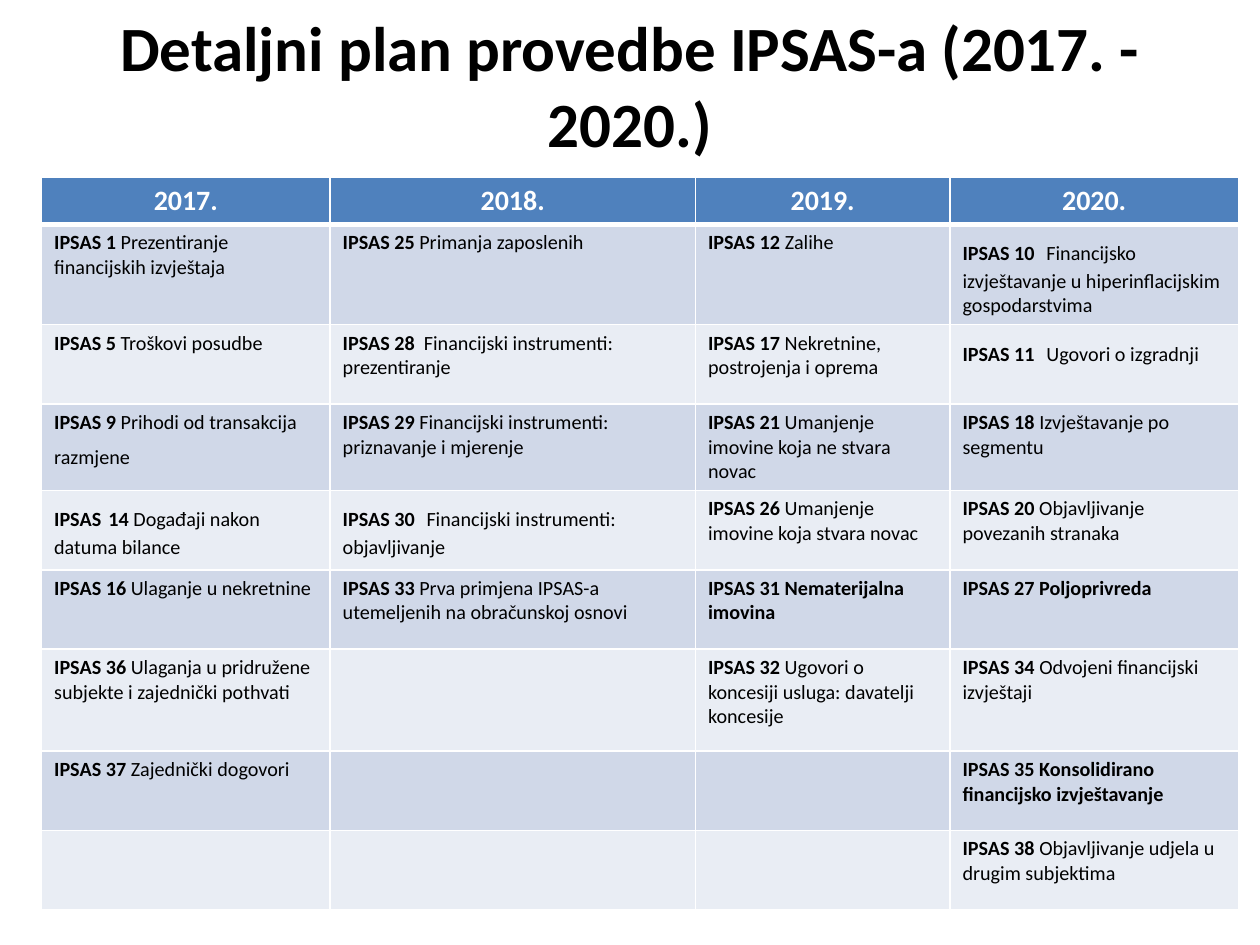
from dataclasses import dataclass

from lxml import etree
from pptx import Presentation
from pptx.dml.color import RGBColor
from pptx.enum.text import MSO_ANCHOR, MSO_AUTO_SIZE, PP_ALIGN
from pptx.oxml.ns import qn
from pptx.util import Inches, Pt

CENTER = PP_ALIGN.CENTER
MIDDLE = MSO_ANCHOR.MIDDLE
NO_AUTOFIT = MSO_AUTO_SIZE.NONE
TITLE_ONLY = 5


@dataclass(frozen=True)
class Theme:
    font: str = "Calibri"
    ink: str = "000000"
    paper: str = "FFFFFF"
    header: str = "4F81BD"
    bands: tuple = ("D0D8E8", "E9EDF4")
    title_size: float = 36
    header_size: float = 16
    body_size: float = 11.5
    gap_size: float = 18
    rule: float = 1
    header_rule: float = 3


THEME = Theme()
TITLE = "Detaljni plan provedbe IPSAS-a (2017. - 2020.)"
COLUMN_WIDTHS = (2.29, 2.9, 2.02, 2.29)
HEADER_HEIGHT, ROW_HEIGHT, TALL_ROW_HEIGHT = 0.35, 0.63, 0.81
TALL_ROW = 6

# Text before "|" is bold; "_" is a space in the larger gap size.
PLAN = {
    "2017.": (
        "IPSAS 1| Prezentiranje financijskih izvještaja",
        "IPSAS 5| Troškovi posudbe",
        "IPSAS 9 |Prihodi od transakcija razmjene_",
        "IPSAS_14| Događaji nakon datuma bilance",
        "IPSAS 16| Ulaganje u nekretnine",
        "IPSAS 36| Ulaganja u pridružene subjekte i zajednički pothvati",
        "IPSAS 37| Zajednički dogovori",
        "",
    ),
    "2018.": (
        "IPSAS 25 |Primanja zaposlenih",
        "IPSAS 28|  Financijski instrumenti: prezentiranje",
        "IPSAS 29| Financijski instrumenti: priznavanje i mjerenje",
        "IPSAS 30 |_Financijski instrumenti: objavljivanje",
        "IPSAS 33| Prva primjena IPSAS-a utemeljenih na obračunskoj osnovi",
        "",
        "",
        "",
    ),
    "2019.": (
        "IPSAS 12 |Zalihe",
        "IPSAS 17| Nekretnine, postrojenja i oprema",
        "IPSAS 21| Umanjenje imovine koja ne stvara novac",
        "IPSAS 26| Umanjenje imovine koja stvara novac",
        "IPSAS 31 Nematerijalna imovina|",
        "IPSAS 32| Ugovori o koncesiji usluga: davatelji koncesije",
        "",
        "",
    ),
    "2020.": (
        "IPSAS 10 |_Financijsko izvještavanje u hiperinflacijskim gospodarstvima",
        "IPSAS 11 |_Ugovori o izgradnji",
        "IPSAS 18 |Izvještavanje po segmentu",
        "IPSAS 20| Objavljivanje povezanih stranaka",
        "IPSAS 27 Poljoprivreda|",
        "IPSAS 34 |Odvojeni financijski izvještaji",
        "IPSAS 35 Konsolidirano financijsko izvještavanje|",
        "IPSAS 38 |Objavljivanje udjela u drugim subjektima",
    ),
}


def style_font(font, size, color, bold):
    font.name = THEME.font
    font.size = Pt(size)
    font.color.rgb = RGBColor.from_string(color)
    font.bold = bold


def add_title(slide):
    title = slide.shapes.title
    title.left, title.top = Inches(0.5), Inches(0.17)
    title.width, title.height = Inches(9), Inches(1)
    frame = title.text_frame
    frame.text = TITLE
    frame.word_wrap = True
    frame.auto_size = NO_AUTOFIT
    frame.vertical_anchor = MIDDLE
    heading = frame.paragraphs[0]
    heading.alignment = CENTER
    style_font(heading.font, THEME.title_size, THEME.ink, True)


def add_run(paragraph, text, size, bold):
    run = paragraph.add_run()
    run.text = text
    style_font(run.font, size, THEME.ink, bold)


def write_standard(cell, entry):
    """Write the bold code and plain name, with the wider gaps between."""
    paragraph = cell.text_frame.paragraphs[0]
    code, _, name = entry.partition("|")
    for part, bold in ((code, True), (name, False)):
        for index, piece in enumerate(part.split("_")):
            if index:
                add_run(paragraph, " ", THEME.gap_size, False)
            if piece:
                add_run(paragraph, piece, THEME.body_size, bold)


def write_year(cell, year):
    cell.text = year
    paragraph = cell.text_frame.paragraphs[0]
    paragraph.alignment = CENTER
    style_font(paragraph.font, THEME.header_size, THEME.paper, True)


def paint_cell(cell, fill, top, bottom):
    """Set the borders first, since the fill must follow them in the XML."""
    properties = cell._tc.get_or_add_tcPr()
    widths = {"a:lnL": THEME.rule, "a:lnR": THEME.rule, "a:lnT": top, "a:lnB": bottom}
    for tag, width in widths.items():
        line = etree.SubElement(properties, qn(tag), w=str(Pt(width)))
        solid = etree.SubElement(line, qn("a:solidFill"))
        etree.SubElement(solid, qn("a:srgbClr"), val=THEME.paper)
    cell.fill.solid()
    cell.fill.fore_color.rgb = RGBColor.from_string(fill)


def add_plan_table(slide):
    standards = list(zip(*PLAN.values()))
    heights = [HEADER_HEIGHT] + [ROW_HEIGHT] * len(standards)
    heights[TALL_ROW] = TALL_ROW_HEIGHT
    table = slide.shapes.add_table(
        len(heights), len(PLAN), Inches(0.33), Inches(1.41),
        Inches(sum(COLUMN_WIDTHS)), Inches(sum(heights)),
    ).table
    for column, width in zip(table.columns, COLUMN_WIDTHS):
        column.width = Inches(width)
    for row, height in zip(table.rows, heights):
        row.height = Inches(height)

    for column, year in enumerate(PLAN):
        cell = table.cell(0, column)
        write_year(cell, year)
        paint_cell(cell, THEME.header, THEME.rule, THEME.header_rule)
    for row, entries in enumerate(standards, start=1):
        band = THEME.bands[(row - 1) % len(THEME.bands)]
        top = THEME.header_rule if row == 1 else THEME.rule
        for column, entry in enumerate(entries):
            cell = table.cell(row, column)
            write_standard(cell, entry)
            paint_cell(cell, band, top, THEME.rule)


def main():
    deck = Presentation()
    deck.slide_width, deck.slide_height = Inches(10), Inches(7.5)
    slide = deck.slides.add_slide(deck.slide_layouts[TITLE_ONLY])
    add_title(slide)
    add_plan_table(slide)
    deck.save("out.pptx")


if __name__ == "__main__":
    main()
